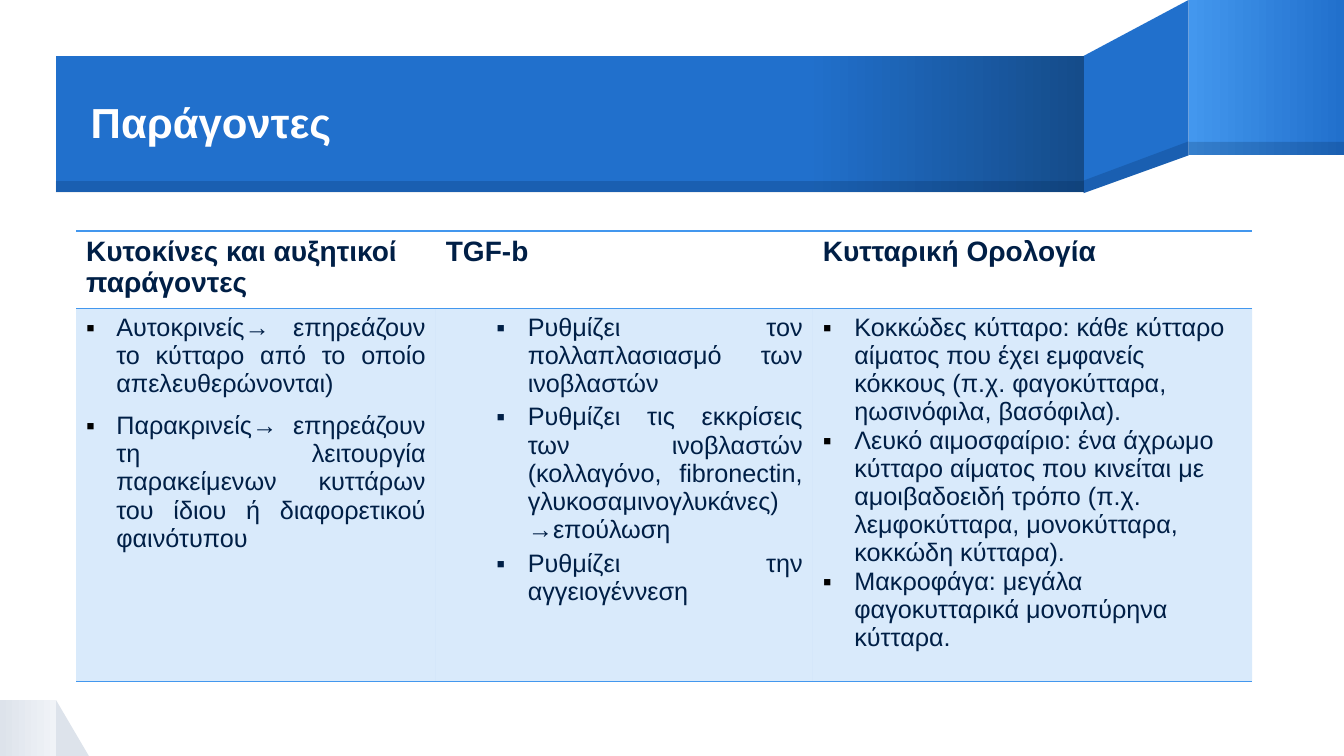
from lxml import etree
from pptx import Presentation
from pptx import util as u
from pptx.dml.color import RGBColor
from pptx.enum import shapes, text
from pptx.oxml.ns import qn

FONT = "Arial"
NAVY, BLUE, SKY, WHITE, BLACK = "001F46", "2170CC", "4397EE", "FFFFFF", "000000"
GREY, PALE, DEEP = "DDE3EB", "F0F3F7", "154C8A"
TITLE = "Παράγοντες"
NO_STYLE = "{2D5ABB26-0587-4C30-8999-92F81FD0307C}"

RECTANGLE = shapes.MSO_SHAPE.RECTANGLE
TRIANGLE = shapes.MSO_SHAPE.RIGHT_TRIANGLE
BAR_LEFT, BAR_TOP, BAR_RIGHT, BAR_BOTTOM = 40, 40, 774, 137.5
FOLD, FOLD_BOTTOM, EDGE, SHADE = 849.3, 110.7, 960, 20
FLOOR, BASE = 500, 540

DECORATION = [
    (TRIANGLE, (BAR_LEFT, FLOOR, 23.5, BASE - FLOOR), [(0, GREY)], 100),
    (RECTANGLE, (0, FLOOR, BAR_LEFT, BASE - FLOOR), [(0, GREY), (100, PALE)], 100),
    ("free", [(FOLD, 0), (BAR_RIGHT, BAR_TOP), (BAR_RIGHT, BAR_BOTTOM), (FOLD, FOLD_BOTTOM)], [(0, BLUE)], 100),
    (RECTANGLE, (FOLD, 0, EDGE - FOLD, FOLD_BOTTOM), [(0, SKY), (100, BLUE)], 100),
    (RECTANGLE, (BAR_LEFT, BAR_TOP, BAR_RIGHT - BAR_LEFT, BAR_BOTTOM - BAR_TOP),
     [(0, BLUE), (73, BLUE), (100, DEEP)], 100),
    ("free", [(FOLD, 101.4), (BAR_RIGHT, 129.4), (BAR_RIGHT, BAR_BOTTOM), (FOLD, FOLD_BOTTOM)], [(0, NAVY)], SHADE),
    (RECTANGLE, (FOLD, 101.4, EDGE - FOLD, FOLD_BOTTOM - 101.4), [(0, NAVY)], SHADE),
    (RECTANGLE, (BAR_LEFT, 129.4, BAR_RIGHT - BAR_LEFT, BAR_BOTTOM - 129.4), [(0, NAVY)], SHADE),
]

TABLE_LEFT, TABLE_TOP = 54.3, 165
ROW_HEIGHTS = [51.4, 265]
COLUMNS = [
    {"width": 257, "header": "Κυτοκίνες και αυξητικοί παράγοντες",
     "margin": 21.6, "hang": 21.6, "before": 3.6, "after": 6, "justify": True, "bullet": BLACK,
     "items": ["Αυτοκρινείς→ επηρεάζουν το κύτταρο από το οποίο απελευθερώνονται)",
               "Παρακρινείς→ επηρεάζουν τη λειτουργία παρακείμενων κυττάρων του ίδιου ή διαφορετικού φαινότυπου"]},
    {"width": 269.3, "header": "TGF-b",
     "margin": 58.5, "hang": 22.5, "before": 3.6, "after": 0, "justify": True, "bullet": NAVY,
     "items": ["Ρυθμίζει τον πολλαπλασιασμό των ινοβλαστών",
               "Ρυθμίζει τις εκκρίσεις των ινοβλαστών (κολλαγόνο, fibronectin, γλυκοσαμινογλυκάνες)→επούλωση",
               "Ρυθμίζει την αγγειογέννεση"]},
    {"width": 313.9, "header": "Κυτταρική Ορολογία",
     "margin": 22.5, "hang": 22.5, "before": 0, "after": 0, "justify": False, "bullet": BLACK,
     "items": ["Κοκκώδες κύτταρο: κάθε κύτταρο αίματος που έχει εμφανείς κόκκους "
               "(π.χ. φαγοκύτταρα, ηωσινόφιλα, βασόφιλα).",
               "Λευκό αιμοσφαίριο: ένα άχρωμο κύτταρο αίματος που κινείται με αμοιβαδοειδή τρόπο "
               "(π.χ. λεμφοκύτταρα, μονοκύτταρα, κοκκώδη κύτταρα).",
               "Μακροφάγα: μεγάλα φαγοκυτταρικά μονοπύρηνα κύτταρα."]},
]


def color(value):
    return RGBColor.from_string(value)


def add(parent, tag, **attributes):
    return etree.SubElement(parent, qn(tag), {name: str(value) for name, value in attributes.items()})


def fill_solid(fill, element, value, opacity):
    fill.solid()
    fill.fore_color.rgb = color(value)
    if opacity < 100:
        add(element.xpath("./a:solidFill/a:srgbClr")[0], "a:alpha", val=opacity * 1000)


def fill_gradient(shape, stops):
    shape.fill.gradient()
    shape.fill.gradient_angle = 0
    stop_list = shape.element.spPr.xpath("./a:gradFill/a:gsLst")[0]
    for stop in list(stop_list):
        stop_list.remove(stop)
    for position, value in stops:
        add(add(stop_list, "a:gs", pos=position * 1000), "a:srgbClr", val=value)


def decorate(slide, kind, geometry, stops, opacity):
    if kind == "free":
        builder = slide.shapes.build_freeform(*geometry[0], scale=u.Pt(1))
        builder.add_line_segments(geometry[1:], close=True)
        shape = builder.convert_to_shape()
    else:
        shape = slide.shapes.add_shape(kind, *map(u.Pt, geometry))
    shape.shadow.inherit = False
    shape.line.fill.background()
    if len(stops) > 1:
        fill_gradient(shape, stops)
    else:
        fill_solid(shape.fill, shape.element.spPr, stops[0][1], opacity)


def write(paragraph, content, size, value, bold):
    run = paragraph.add_run()
    run.text = content
    run.font.color.rgb = color(value)
    for name, setting in {"name": FONT, "size": u.Pt(size), "bold": bold}.items():
        setattr(run.font, name, setting)


def add_title(slide):
    box = slide.shapes.add_textbox(*map(u.Pt, (64.8, 41, 709.2, 96.5)))
    frame = box.text_frame
    settings = {"word_wrap": True, "vertical_anchor": text.MSO_ANCHOR.MIDDLE,
                "margin_left": 0, "margin_right": 0, "margin_top": 0, "margin_bottom": 0}
    for name, setting in settings.items():
        setattr(frame, name, setting)
    frame.paragraphs[0].line_spacing = 0.9
    write(frame.paragraphs[0], TITLE, 30, WHITE, True)


def add_borders(cell):
    properties = cell._tc.get_or_add_tcPr()
    for index, side in enumerate(("a:lnT", "a:lnB")):
        line = add(properties, side, w=u.Pt(1))
        add(add(line, "a:solidFill"), "a:srgbClr", val=SKY)
        properties.insert(index, line)


def add_items(cell, column):
    frame = cell.text_frame
    for index, item in enumerate(column["items"]):
        paragraph = frame.add_paragraph() if index else frame.paragraphs[0]
        paragraph.alignment = text.PP_ALIGN.JUSTIFY if column["justify"] else text.PP_ALIGN.LEFT
        paragraph.space_before = u.Pt(column["before"] if index else 0)
        paragraph.space_after = u.Pt(column["after"])
        properties = paragraph._p.get_or_add_pPr()
        properties.set("marL", str(u.Pt(column["margin"])))
        properties.set("indent", str(-u.Pt(column["hang"])))
        add(add(properties, "a:buClr"), "a:srgbClr", val=column["bullet"])
        add(properties, "a:buFont", typeface=FONT)
        add(properties, "a:buChar", char="▪")
        write(paragraph, item, 18, NAVY, False)


def add_factor_table(slide):
    width = sum(column["width"] for column in COLUMNS)
    box = (TABLE_LEFT, TABLE_TOP, width, sum(ROW_HEIGHTS))
    table = slide.shapes.add_table(len(ROW_HEIGHTS), len(COLUMNS), *map(u.Pt, box)).table
    table._tbl.tblPr.find(qn("a:tableStyleId")).text = NO_STYLE
    table.horz_banding = False
    for row, height in zip(table.rows, ROW_HEIGHTS):
        row.height = u.Pt(height)
    for index, column in enumerate(COLUMNS):
        table.columns[index].width = u.Pt(column["width"])
        header, body = table.cell(0, index), table.cell(1, index)
        header.fill.background()
        fill_solid(body.fill, body._tc.get_or_add_tcPr(), SKY, 20)
        add_borders(header)
        add_borders(body)
        write(header.text_frame.paragraphs[0], column["header"], 20, NAVY, True)
        add_items(body, column)


def main():
    presentation = Presentation()
    presentation.slide_width, presentation.slide_height = u.Pt(EDGE), u.Pt(BASE)
    slide = presentation.slides.add_slide(presentation.slide_layouts[6])
    for part in DECORATION:
        decorate(slide, *part)
    add_title(slide)
    add_factor_table(slide)
    presentation.save("out.pptx")


if __name__ == "__main__":
    main()
